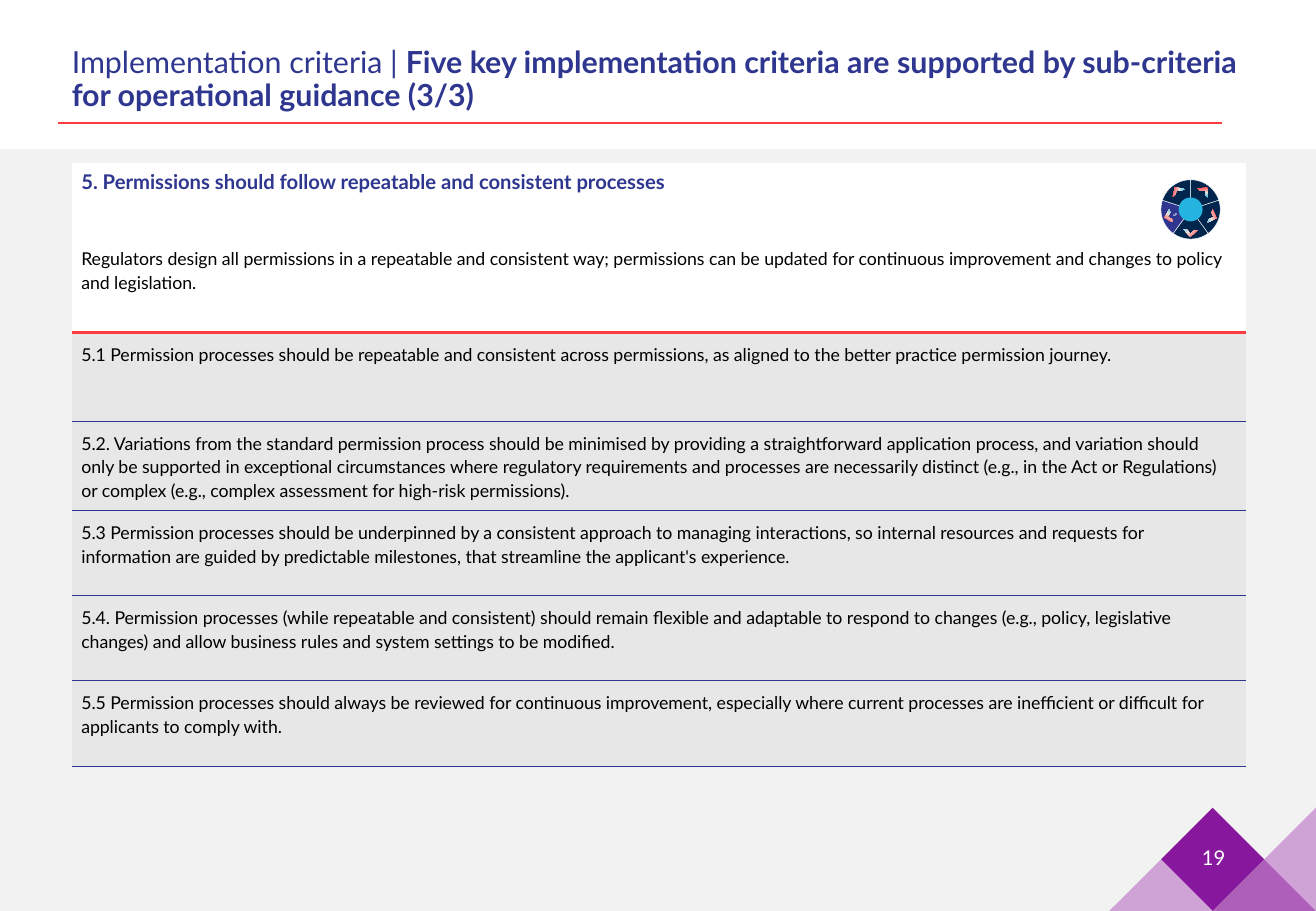
from dataclasses import dataclass
from math import cos, radians, sin

from lxml import etree
from pptx import Presentation
from pptx.dml.color import RGBColor
from pptx.enum.shapes import MSO_CONNECTOR, MSO_SHAPE
from pptx.enum.text import MSO_ANCHOR, MSO_AUTO_SIZE, PP_ALIGN
from pptx.oxml.ns import qn
from pptx.util import Cm, Pt

LEFT, CENTER = PP_ALIGN.LEFT, PP_ALIGN.CENTER
TOP, MIDDLE, BOTTOM = MSO_ANCHOR.TOP, MSO_ANCHOR.MIDDLE, MSO_ANCHOR.BOTTOM
RECT, OVAL, FRAME = MSO_SHAPE.RECTANGLE, MSO_SHAPE.OVAL, MSO_SHAPE.HALF_FRAME
LINE = MSO_CONNECTOR.STRAIGHT
PLAIN = "{2D5ABB26-0587-4C30-8999-92F81FD0307C}"  # table style without grid


@dataclass(frozen=True)
class Theme:
    font: str = "Lato"
    blue: str = "2E368F"
    navy: str = "00264D"
    sky: str = "25B3E0"
    red: str = "FF3A40"
    pale: str = "E6E6E1"
    white: str = "FFFFFF"
    black: str = "000000"
    back: str = "F2F2F2"
    band: str = "E7E7E7"
    plum: str = "87189D"
    mauve: str = "AD5FB9"
    lilac: str = "D0A3D7"
    title: float = 18
    head: float = 12
    body: float = 10.5
    tiny: float = 3


T = Theme()
WIDE, HIGH = 27.51, 19.05

HEAD = "5. Permissions should follow repeatable and consistent processes"
LEAD = ("Regulators design all permissions in a repeatable and consistent way; permissions can be "
        "updated for continuous improvement and changes to policy and legislation.")
RULES = [
    "5.1 Permission processes should be repeatable and consistent across permissions, as aligned "
    "to the better practice permission journey.",
    "5.2. Variations from the standard permission process should be minimised by providing a "
    "straightforward application process, and variation should only be supported in exceptional "
    "circumstances where regulatory requirements and processes are necessarily distinct (e.g., in "
    "the Act or Regulations) or complex (e.g., complex assessment for high-risk permissions).",
    "5.3 Permission processes should be underpinned by a consistent approach to managing "
    "interactions, so internal resources and requests for information are guided by predictable "
    "milestones, that streamline the applicant's experience.",
    "5.4. Permission processes (while repeatable and consistent) should remain flexible and "
    "adaptable to respond to changes (e.g., policy, legislative changes) and allow business rules "
    "and system settings to be modified.",
    "5.5 Permission processes should always be reviewed for continuous improvement, especially "
    "where current processes are inefficient or difficult for applicants to comply with.",
]
ROWS = [1.55, 2.01, 1.85, 1.85, 1.78, 1.78, 1.78]


def rgb(code):
    return RGBColor.from_string(code)


def box(*sides):
    return [Cm(side) for side in sides]


def write(para, text, size, color, bold=False):
    run = para.add_run()
    run.text = text
    font = run.font
    font.name, font.size, font.bold = T.font, Pt(size), bold
    font.color.rgb = rgb(color)


def inset(frame, side, end):
    frame.margin_left = frame.margin_right = Cm(side)
    frame.margin_top = frame.margin_bottom = Cm(end)


def paint(shape, color):
    shape.shadow.inherit = False
    shape.fill.solid()
    shape.fill.fore_color.rgb = rgb(color)
    shape.line.fill.background()


def block(shapes, kind, place, color):
    shape = shapes.add_shape(kind, *box(*place))
    paint(shape, color)
    return shape


def outline(shapes, points, color):
    spots = [box(*point) for point in points]
    form = shapes.build_freeform(*spots[0], scale=1.0)
    form.add_line_segments(spots[1:], close=True)
    shape = form.convert_to_shape()
    paint(shape, color)
    return shape


def blend(shape, stops):
    shape.fill.gradient()
    shape.fill.gradient_angle = 0
    items = next(shape.element.iter(qn("a:gsLst")))
    for item in list(items):
        items.remove(item)
    for spot, color in stops:
        stop = etree.SubElement(items, qn("a:gs"), pos=str(spot * 1000))
        etree.SubElement(stop, qn("a:srgbClr"), val=color)


def label(shapes, place, text, size, wrap=True, bold=False, gap=(0.25, 0.13)):
    shape = shapes.add_textbox(*box(*place))
    frame = shape.text_frame
    frame.word_wrap = wrap
    frame.vertical_anchor = MIDDLE if wrap else TOP
    inset(frame, *gap)
    para = frame.paragraphs[0]
    para.alignment = CENTER
    write(para, text, size, T.white, bold)
    return shape


def border(cell, side, color, width):
    line = etree.SubElement(cell._tc.get_or_add_tcPr(), qn("a:" + side), w=str(Pt(width)))
    fill = etree.SubElement(line, qn("a:solidFill"))
    etree.SubElement(fill, qn("a:srgbClr"), val=color)


def fill_cell(cell, text, fill, size=T.body, color=T.black, bold=False, space=1.1, after=0):
    cell.fill.solid()
    cell.fill.fore_color.rgb = rgb(fill)
    inset(cell, 0.2, 0.2)
    para = cell.text_frame.paragraphs[0]
    para.line_spacing, para.space_after = space, Pt(after)
    write(para, text, size, color, bold)


def add_title(slide):
    title = slide.shapes.title
    title.left, title.top, title.width, title.height = box(1.5, 0.84, 24.74, 1.65)
    frame = title.text_frame
    frame.auto_size, frame.word_wrap = MSO_AUTO_SIZE.NONE, True
    frame.vertical_anchor = BOTTOM
    inset(frame, 0, 0.13)
    para = frame.paragraphs[0]
    para.alignment, para.line_spacing = LEFT, 0.9
    write(para, "Implementation criteria | ", T.title, T.blue)
    write(para, "Five key implementation criteria are supported by sub-criteria "
          "for operational guidance (3/3)", T.title, T.blue, True)
    # Rule below the title
    rule = slide.shapes.add_connector(LINE, *box(1.22, 2.57, 25.55, 2.57))
    rule.line.color.rgb, rule.line.width = rgb(T.red), Pt(1.25)
    etree.SubElement(rule.element.spPr, qn("a:effectLst"))


def add_grid(shapes):
    frame = shapes.add_table(len(ROWS), 1, *box(1.5, 3.4, 24.54, sum(ROWS)))
    grid = frame.table
    grid.first_row = grid.horz_banding = False
    next(frame.element.iter(qn("a:tableStyleId"))).text = PLAIN
    for row, tall in zip(grid.rows, ROWS):
        row.height = Cm(tall)
    cells = [row.cells[0] for row in grid.rows]
    # Borders come before fills in the cell properties
    for upper, lower in zip(cells[1:], cells[2:] + [None]):
        look = (T.red, 2.25) if upper is cells[1] else (T.blue, 0.5)
        border(upper, "lnB", *look)
        if lower is not None:
            border(lower, "lnT", *look)
    fill_cell(cells[0], HEAD, T.white, T.head, T.blue, True, 0.9)
    fill_cell(cells[1], LEAD, T.white)
    for cell, text in zip(cells[2:], RULES):
        fill_cell(cell, text, T.band, after=4.8)


def add_wheel(shapes):
    mid_x, mid_y, step = 24.89, 4.38, 72

    def polar(angle, reach):
        turn = radians(angle)
        return mid_x + reach * sin(turn), mid_y - reach * cos(turn)

    # Five sectors, the fourth one in blue
    for part in range(5):
        arc = [polar(part * step + turn, 0.62) for turn in range(0, step + 1, 6)]
        slice_ = outline(shapes, [(mid_x, mid_y)] + arc, T.blue if part == 3 else T.navy)
        slice_.line.color.rgb, slice_.line.width = rgb(T.white), Pt(0.25)
    block(shapes, OVAL, (mid_x - 0.25, mid_y - 0.25, 0.5, 0.5), T.sky)
    # One corner mark in each sector
    for part in range(5):
        angle = step * (part + 0.5)
        x, y = polar(angle, 0.43)
        mark = block(shapes, FRAME, (x - 0.1, y - 0.1, 0.2, 0.2), T.red)
        mark.adjustments[0] = mark.adjustments[1] = 0.238
        mark.rotation = (angle + 48.5) % 360
        blend(mark, [(0, T.red), (53, T.pale), (100, T.sky)])
    digit = label(shapes, (24.46, 4.37, 0.23, 0.23), "5", T.tiny, False, True, (0.1, 0.1))
    digit.rotation = 63.6


def add_corner(shapes):
    unit = 1.08
    x = [WIDE - unit * count for count in range(4, -1, -1)]
    low, mid, top = HIGH, HIGH - unit, HIGH - 2 * unit
    outline(shapes, [(x[1], mid), (x[2], top), (x[3], mid), (x[2], low)], T.plum)
    outline(shapes, [(x[4], top), (x[4], low), (x[3], mid)], T.lilac)
    outline(shapes, [(x[0], low), (x[1], mid), (x[2], low)], T.lilac)
    outline(shapes, [(x[2], low), (x[3], mid), (x[4], low)], T.mauve)


def main():
    deck = Presentation()
    deck.slide_width, deck.slide_height = box(WIDE, HIGH)
    slide = deck.slides.add_slide(deck.slide_layouts[5])
    shapes = slide.shapes
    block(shapes, RECT, (0, 3.12, WIDE, HIGH - 3.12), T.back)
    add_title(slide)
    add_grid(shapes)
    add_wheel(shapes.add_group_shape().shapes)
    add_corner(shapes.add_group_shape().shapes)
    label(shapes, (24.76, 17.42, 1.22, 1.02), "19", T.head)
    deck.save("out.pptx")


if __name__ == "__main__":
    main()
